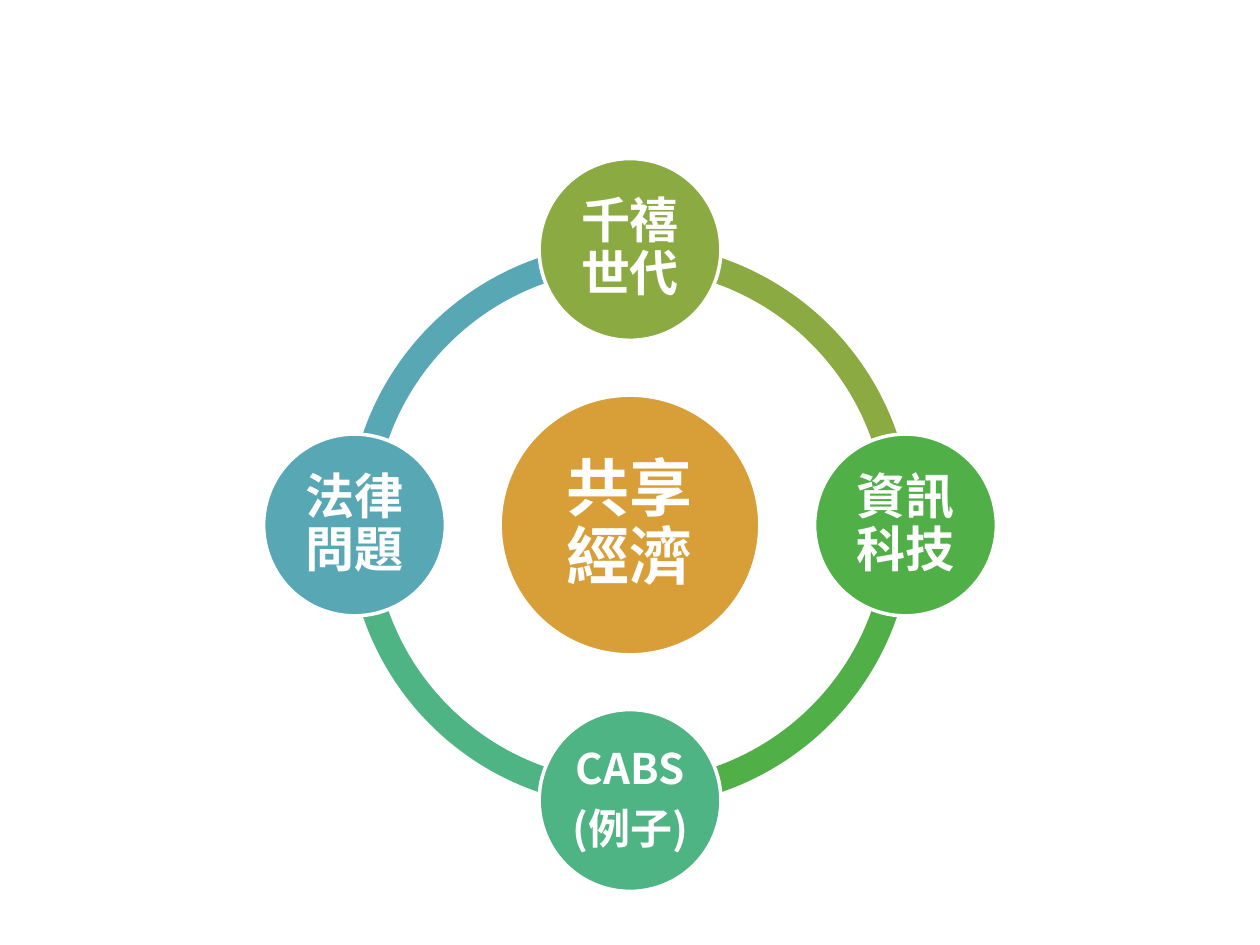
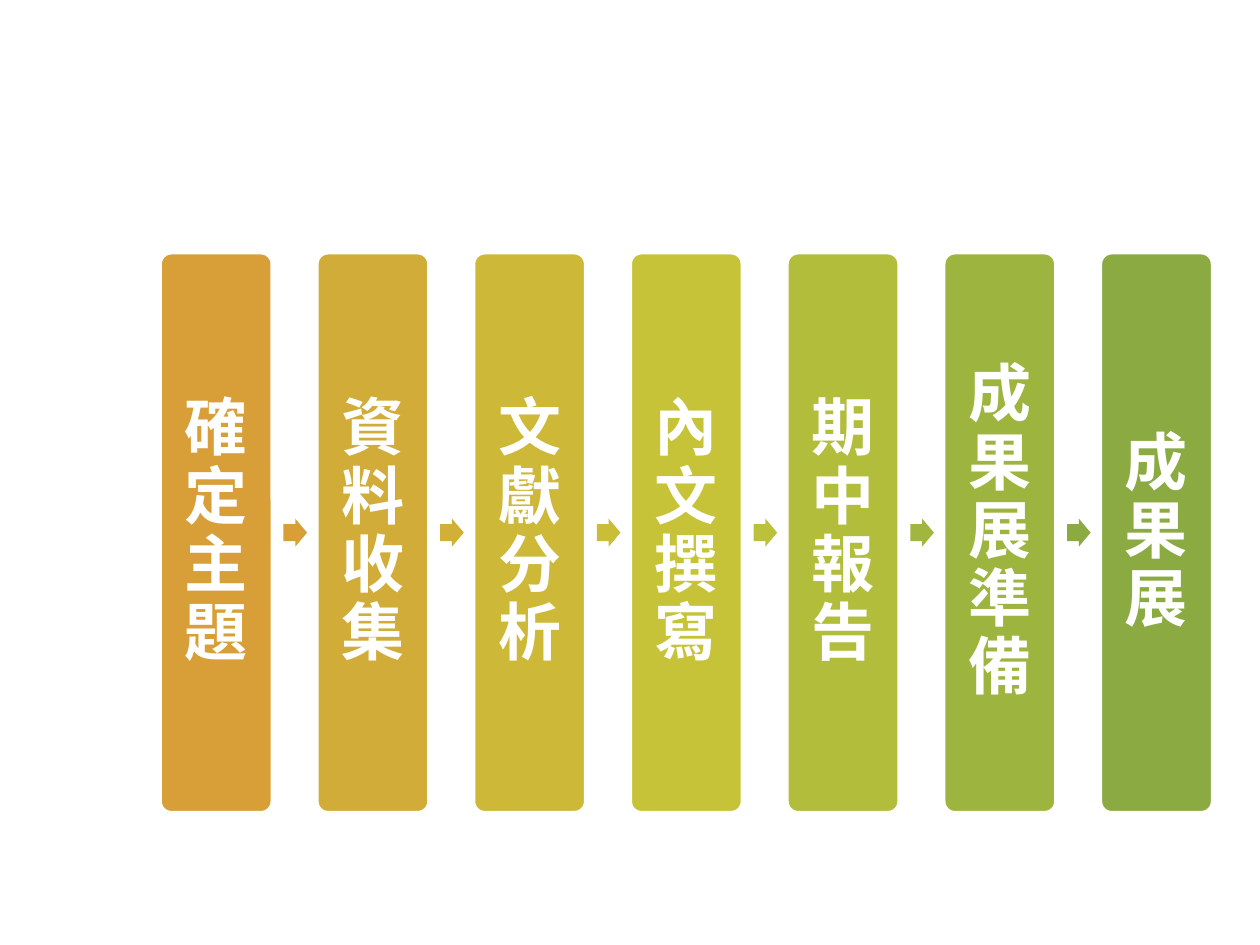
from math import cos, pi, sin

from lxml import etree
from pptx import Presentation
from pptx.dml.color import RGBColor
from pptx.enum.shapes import MSO_SHAPE
from pptx.enum.text import MSO_ANCHOR, PP_ALIGN
from pptx.oxml.ns import qn
from pptx.util import Pt

ARC = MSO_SHAPE.BLOCK_ARC
OVAL = MSO_SHAPE.OVAL
CARD = MSO_SHAPE.ROUNDED_RECTANGLE
ARROW = MSO_SHAPE.RIGHT_ARROW
MIDDLE = MSO_ANCHOR.MIDDLE
CENTER = PP_ALIGN.CENTER

FONT = "Noto Sans CJK SC"
COLORS = {
    "white": "FFFFFF", "gold": "D89F39", "olive": "8BAB42",
    "green": "50B047", "mint": "4EB484", "teal": "57A7B5",
    "amber": "D2AC39", "sand": "CDB838", "lime": "C7C338",
    "leaf": "B2BD3C", "moss": "9DB43F",
    "amber_tip": "D1AF39", "sand_tip": "CABD38",
    "lime_tip": "BCC13B", "leaf_tip": "A1B63E",
}
NODES = [
    (["千禧世代"], "olive", 28, 2.9),
    (["資訊科技"], "green", 28, 2.9),
    (["CABS", "(例子)"], "mint", 24, 2.2),
    (["法律問題"], "teal", 28, 2.9),
]
STEPS = [
    ("確定主題", "gold", "gold"),
    ("資料收集", "amber", "amber_tip"),
    ("文獻分析", "sand", "sand_tip"),
    ("內文撰寫", "lime", "lime_tip"),
    ("期中報告", "leaf", "leaf_tip"),
    ("成果展準備", "moss", "olive"),
    ("成果展", "olive", None),
]


def color(name):
    return RGBColor.from_string(COLORS[name])


def draw(slide, kind, box, fill, adjust=(), edge=False):
    shape = slide.shapes.add_shape(kind, *[Pt(n) for n in box])
    shape.shadow.inherit = False
    shape.fill.solid()
    shape.fill.fore_color.rgb = color(fill)
    if edge:
        shape.line.color.rgb = color("white")
        shape.line.width = Pt(2)
    else:
        shape.line.fill.background()
    for i, value in enumerate(adjust):
        shape.adjustments[i] = value
    return shape


def write(shape, lines, size, inset):
    frame = shape.text_frame
    frame.word_wrap = True
    frame.vertical_anchor = MIDDLE
    frame.margin_left = frame.margin_right = Pt(inset)
    frame.margin_top = frame.margin_bottom = Pt(inset)
    for i, line in enumerate(lines):
        para = frame.add_paragraph() if i else frame.paragraphs[0]
        para.alignment = CENTER
        para.line_spacing = 0.9
        para.space_after = Pt(size * 0.35)
        run = para.add_run()
        run.text = line
        font = run.font
        font.name = FONT
        font.size = Pt(size)
        font.bold = True
        font.color.rgb = color("white")
        east = etree.SubElement(run._r.get_or_add_rPr(), qn("a:ea"))
        east.set("typeface", FONT)


def disc(slide, x, y, width, fill, lines, size, inset):
    box = (x - width / 2, y - width / 2, width, width)
    write(draw(slide, OVAL, box, fill, edge=True), lines, size, inset)


def wheel(slide, box):
    left, top, side = box
    x, y = left + side / 2, top + side / 2
    turn = 216
    step = turn / len(NODES)
    for i, (lines, fill, size, inset) in enumerate(NODES):
        start = (turn * 0.75 + i * step) % turn
        draw(slide, ARC, (left, top, side, side), fill,
             (start, (start + step) % turn, 0.046))
    disc(slide, x, y, side * 0.46, "gold", ["共享經濟"], 36, 3.7)
    reach = side * 0.488
    for i, (lines, fill, size, inset) in enumerate(NODES):
        angle = 2 * pi * i / len(NODES) - pi / 2
        disc(slide, x + reach * cos(angle), y + reach * sin(angle),
             side * 0.322, fill, lines, size, inset)


def flow(slide, box):
    left, top, width, height = box
    card = 64.1
    pitch = (width - card) / (len(STEPS) - 1)
    tip, tall = 13.5, 16
    for i, (label, fill, next_fill) in enumerate(STEPS):
        x = left + i * pitch
        shape = draw(slide, CARD, (x, top, card, height), fill, (0.1,), True)
        write(shape, [label], 36, 10.8)
        if next_fill:
            spot = (x + 70.5, top + (height - tall) / 2, tip, tall)
            draw(slide, ARROW, spot, next_fill, (0.6, 0.5))


def main():
    deck = Presentation()
    deck.slide_width, deck.slide_height = Pt(720), Pt(540)
    blank = deck.slide_layouts[6]
    wheel(deck.slides.add_slide(blank), (198.7, 138.7, 322.6))
    flow(deck.slides.add_slide(blank), (91.5, 144.4, 601.4, 320))
    deck.save("out.pptx")


if __name__ == "__main__":
    main()
